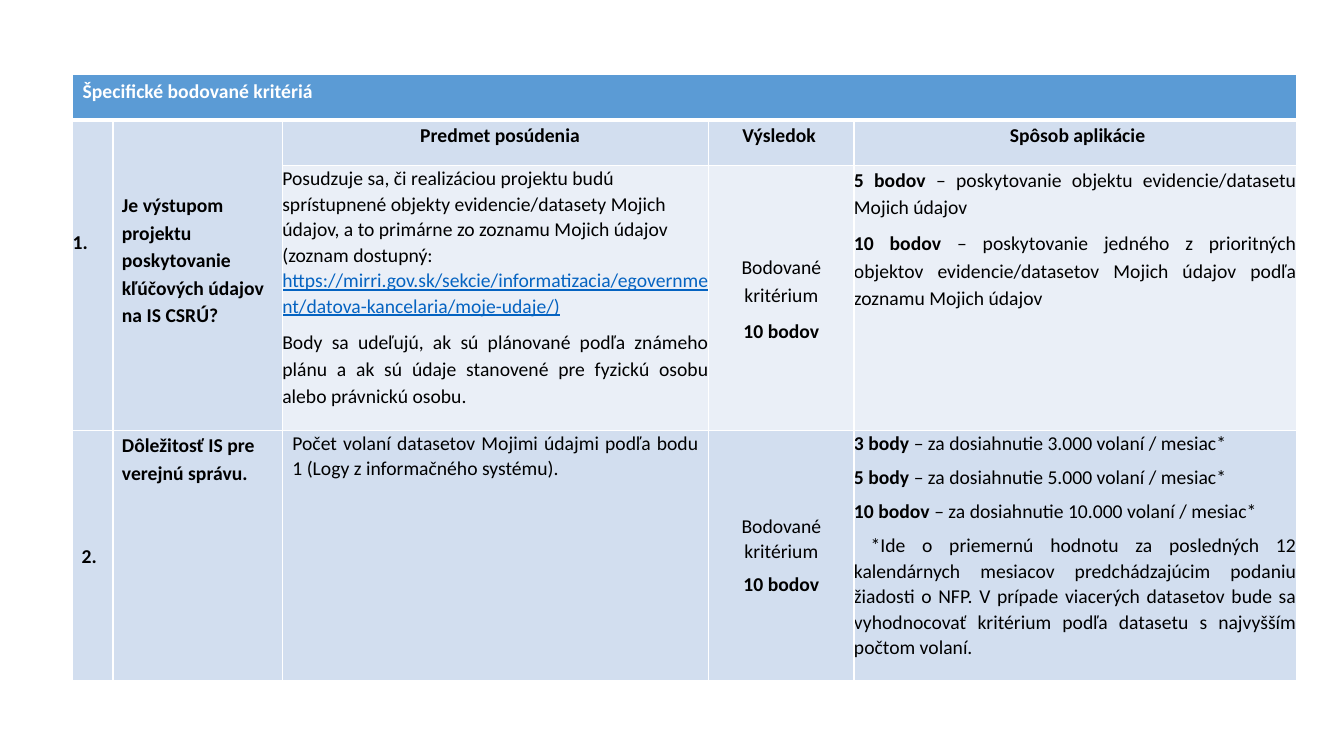
"""Build a slide with a table of specific scored criteria."""
from dataclasses import dataclass, field

from lxml import etree
from pptx import Presentation
from pptx.dml.color import RGBColor
from pptx.enum.text import MSO_ANCHOR, PP_ALIGN
from pptx.oxml.ns import qn
from pptx.util import Inches, Pt

LEFT, CENTER, JUSTIFY = PP_ALIGN.LEFT, PP_ALIGN.CENTER, PP_ALIGN.JUSTIFY
TOP, MIDDLE = MSO_ANCHOR.TOP, MSO_ANCHOR.MIDDLE
WHITE, BLACK, LINK = "FFFFFF", "000000", "0563C1"
HEADER, BAND, LIGHT = "5B9BD5", "D2DEEF", "EAEFF7"
COLUMNS = (0.4, 1.68, 4.23, 1.44, 4.39)
ROWS = (0.45, 0.45, 2.63, 2.48)
INDENT = 0.09


@dataclass(frozen=True)
class Span:
    text: str
    bold: bool = False
    color: str = BLACK
    underline: bool = False


@dataclass(frozen=True)
class Para:
    spans: tuple[Span, ...]
    align: PP_ALIGN = LEFT
    spacing: float = 1.15


@dataclass(frozen=True)
class Entry:
    row: int
    column: int
    paras: tuple[Para, ...]
    fill: str = BAND
    anchor: MSO_ANCHOR = TOP
    margins: dict[str, float] = field(default_factory=dict)
    end: tuple[int, int] | None = None


def hex_color(value: str) -> RGBColor:
    return RGBColor.from_string(value)


def set_all(target: object, values: dict[str, object]) -> None:
    for name, value in values.items():
        setattr(target, name, value)


def title(text: str, align: PP_ALIGN = LEFT) -> tuple[Para, ...]:
    return (Para((Span(text, True),), align),)


def score(label: str, text: str, spacing: float) -> Para:
    return Para((Span(label, True), Span(text)), JUSTIFY, spacing)


def result(spacing: float) -> tuple[Para, ...]:
    return (Para((Span("Bodované kritérium"),), CENTER, spacing),
            Para((Span("10 bodov", True),), CENTER, spacing))


ENTRIES = (
    Entry(0, 0, (Para((Span("Špecifické bodované kritériá", True, WHITE),), spacing=1.0),), HEADER,
          margins={"left": 0.1, "right": 0.1, "top": 0.05, "bottom": 0.05}, end=(0, 4)),
    Entry(1, 0, title("1."), margins={"top": 1.06}, end=(2, 0)),
    Entry(1, 1, title("Je výstupom projektu poskytovanie kľúčových údajov na IS CSRÚ?"),
          margins={"left": INDENT, "top": 0.7}, end=(2, 1)),
    Entry(1, 2, title("Predmet posúdenia", CENTER), margins={"left": INDENT}),
    Entry(1, 3, title("Výsledok ", CENTER)),
    Entry(1, 4, title("Spôsob aplikácie ", CENTER), margins={"left": INDENT}),
    Entry(2, 2, (
        Para((Span("Posudzuje sa, či realizáciou projektu budú sprístupnené objekty "
                   "evidencie/datasety Mojich údajov, a to primárne zo zoznamu Mojich údajov "
                   "(zoznam dostupný: "),
              Span("https://mirri.gov.sk/sekcie/informatizacia/egovernment/"
                   "datova-kancelaria/moje-udaje/)", color=LINK, underline=True)), spacing=1.07),
        Para((Span("Body sa udeľujú, ak sú plánované podľa známeho plánu a ak sú údaje "
                   "stanovené pre fyzickú osobu alebo právnickú osobu."),), JUSTIFY),
    ), LIGHT),
    Entry(2, 3, result(1.15), LIGHT, MIDDLE),
    Entry(2, 4, (
        score("5 bodov ", "– poskytovanie objektu evidencie/datasetu Mojich údajov", 1.15),
        score("10 bodov", " – poskytovanie jedného z prioritných objektov "
              "evidencie/datasetov Mojich údajov podľa zoznamu Mojich údajov", 1.15),
    ), LIGHT),
    Entry(3, 0, title("2."), anchor=MIDDLE, margins={"left": INDENT}),
    Entry(3, 1, title("Dôležitosť IS pre verejnú správu."), margins={"left": INDENT}),
    Entry(3, 2, (Para((Span("Počet volaní datasetov Mojimi údajmi podľa bodu 1 "
                            "(Logy z informačného systému)."),), JUSTIFY, 1.05),),
          margins={"left": 0.1, "right": 0.1}),
    Entry(3, 3, result(1.05), anchor=MIDDLE),
    Entry(3, 4, (
        *(score(label, f"– za dosiahnutie {calls} volaní / mesiac*", 1.07)
          for label, calls in (("3 body ", "3.000"), ("5 body ", "5.000"),
                               ("10 bodov ", "10.000"))),
        Para((Span(" *Ide o priemernú hodnotu za posledných 12 kalendárnych mesiacov "
                   "predchádzajúcim podaniu žiadosti o NFP. V prípade viacerých datasetov "
                   "bude sa vyhodnocovať kritérium podľa datasetu s najvyšším počtom "
                   "volaní."),), JUSTIFY, 1.07),
    )),
)


def draw_borders(cell, row: int) -> None:
    properties = cell._tc.get_or_add_tcPr()
    widths = {"lnL": 1, "lnR": 1, "lnT": 3 if row == 1 else 1, "lnB": 3 if row == 0 else 1}
    for index, (side, width) in enumerate(widths.items()):
        line = etree.Element(qn(f"a:{side}"), w=str(Pt(width)))
        fill = etree.SubElement(line, qn("a:solidFill"))
        etree.SubElement(fill, qn("a:srgbClr"), val=WHITE)
        properties.insert(index, line)


def fill_cell(table, entry: Entry) -> None:
    cell = table.cell(entry.row, entry.column)
    if entry.end:
        cell.merge(table.cell(*entry.end))
    cell.fill.solid()
    cell.fill.fore_color.rgb = hex_color(entry.fill)
    cell.vertical_anchor = entry.anchor
    set_all(cell, {f"margin_{side}": Inches(entry.margins.get(side, 0))
                   for side in ("left", "right", "top", "bottom")})
    frame = cell.text_frame
    for index, para in enumerate(entry.paras):
        paragraph = frame.add_paragraph() if index else frame.paragraphs[0]
        set_all(paragraph, {"alignment": para.align, "line_spacing": para.spacing,
                            "space_before": Pt(6 if entry.row else 0)})
        for span in para.spans:
            run = paragraph.add_run()
            run.text = span.text
            set_all(run.font, {"name": "Calibri", "size": Pt(14), "bold": span.bold,
                               "underline": span.underline})
            run.font.color.rgb = hex_color(span.color)


def main() -> None:
    deck = Presentation()
    set_all(deck, {"slide_width": Inches(13.33), "slide_height": Inches(7.5)})
    page = deck.slides.add_slide(deck.slide_layouts[6])
    table = page.shapes.add_table(len(ROWS), len(COLUMNS), Inches(0.72), Inches(0.74),
                                  Inches(sum(COLUMNS)), Inches(sum(ROWS))).table
    set_all(table, {"first_row": False, "horz_banding": False})
    for column, width in zip(table.columns, COLUMNS):
        column.width = Inches(width)
    for row, height in zip(table.rows, ROWS):
        row.height = Inches(height)
    for entry in ENTRIES:
        fill_cell(table, entry)
    for index, row in enumerate(table.rows):
        for cell in row.cells:
            draw_borders(cell, index)
    deck.save("out.pptx")


if __name__ == "__main__":
    main()
